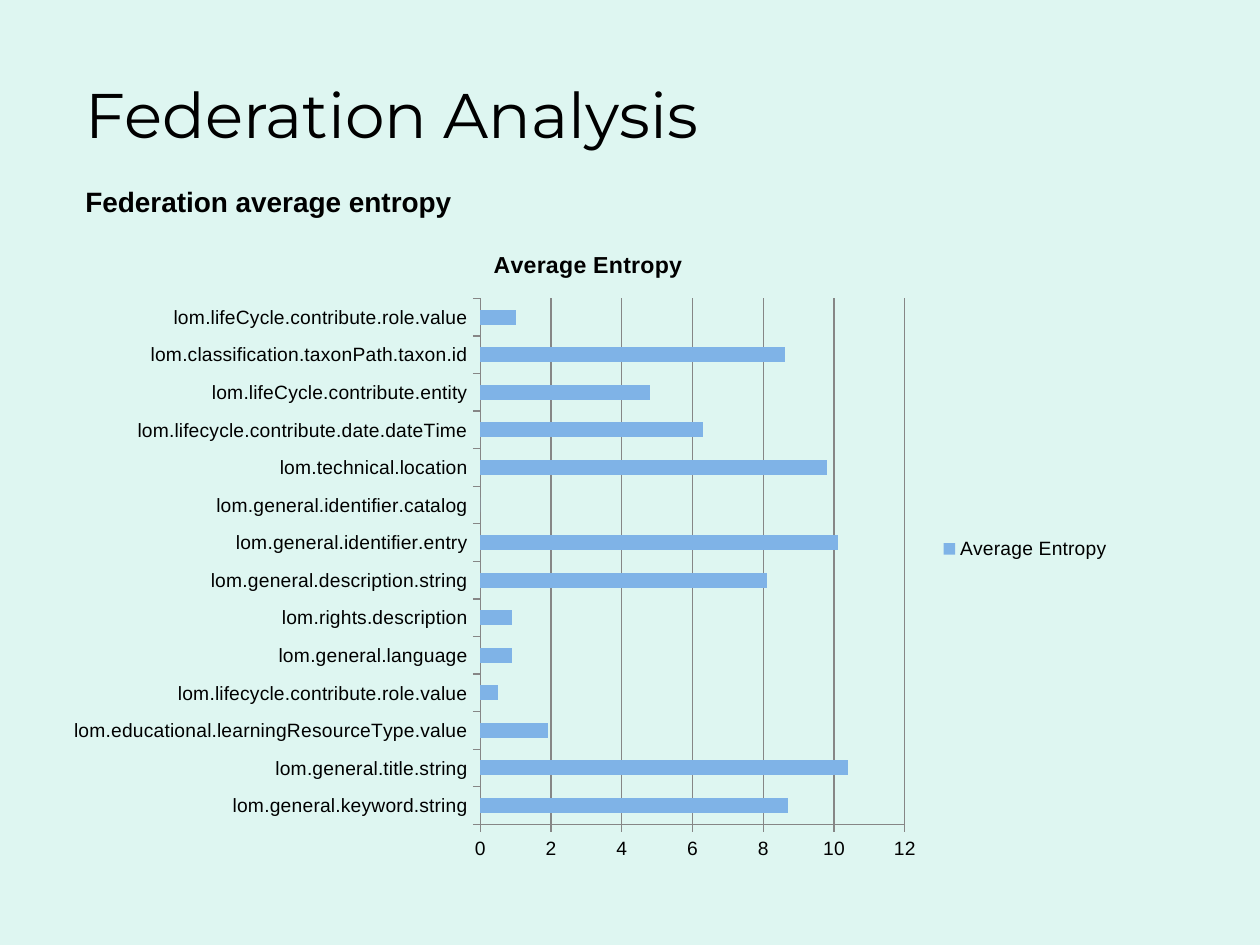
from pptx import Presentation
from pptx import util as u
from pptx.chart.data import CategoryChartData
from pptx.dml.color import RGBColor
from pptx.enum import chart as ch, text

COLORS = {"background": "DEF6F1", "text": "000000", "bar": "7FB3E7", "line": "868686"}
TITLE = "Federation Analysis"
SUBTITLE = "Federation average entropy"
SERIES = "Average Entropy"
ENTROPY = [
    ("lom.general.keyword.string", 8.7),
    ("lom.general.title.string", 10.4),
    ("lom.educational.learningResourceType.value", 1.9),
    ("lom.lifecycle.contribute.role.value", 0.5),
    ("lom.general.language", 0.9),
    ("lom.rights.description", 0.9),
    ("lom.general.description.string", 8.1),
    ("lom.general.identifier.entry", 10.1),
    ("lom.general.identifier.catalog", 0),
    ("lom.technical.location", 9.8),
    ("lom.lifecycle.contribute.date.dateTime", 6.3),
    ("lom.lifeCycle.contribute.entity", 4.8),
    ("lom.classification.taxonPath.taxon.id", 8.6),
    ("lom.lifeCycle.contribute.role.value", 1),
]
# left, top, width, height in centimetres
BOXES = {
    "title": (1.47, 1.47, 21.16, 1.9),
    "subtitle": (1.47, 3.6, 17.58, 0.94),
    "chart": (1.06, 4.55, 21.59, 13.03),
}


def color(name):
    return RGBColor.from_string(COLORS[name])


def box(name):
    return [u.Cm(length) for length in BOXES[name]]


def set_all(target, values):
    for name, value in values.items():
        setattr(target, name, value)


def format_font(font, size, name="Arial", bold=False):
    set_all(font, {"size": u.Pt(size), "name": name, "bold": bold})
    font.color.rgb = color("text")


def write(shape, place, content, size, name, bold, frame_format):
    set_all(shape, dict(zip(("left", "top", "width", "height"), box(place))))
    frame = shape.text_frame
    set_all(frame, {"word_wrap": True, **frame_format})
    paragraph = frame.paragraphs[0]
    paragraph.text = content
    paragraph.alignment = text.PP_ALIGN.LEFT
    format_font(paragraph.runs[0].font, size, name, bold)
    return paragraph


def add_entropy_chart(slide):
    data = CategoryChartData()
    data.categories = [category for category, _ in ENTROPY]
    data.add_series(SERIES, [value for _, value in ENTROPY])
    chart = slide.shapes.add_chart(
        ch.XL_CHART_TYPE.BAR_CLUSTERED, *box("chart"), data).chart
    format_font(chart.font, 11)

    chart.has_title = True
    title = chart.chart_title
    title.include_in_layout = False
    title.text_frame.text = SERIES
    format_font(title.text_frame.paragraphs[0].runs[0].font, 13.2, bold=True)

    chart.has_legend = True
    set_all(chart.legend, {"position": ch.XL_LEGEND_POSITION.RIGHT,
                           "include_in_layout": False})
    format_font(chart.legend.font, 11)

    for axis in (chart.category_axis, chart.value_axis):
        set_all(axis, {"major_tick_mark": ch.XL_TICK_MARK.OUTSIDE,
                       "minor_tick_mark": ch.XL_TICK_MARK.NONE})
        axis.format.line.color.rgb = color("line")
        format_font(axis.tick_labels.font, 11)
    chart.category_axis.has_major_gridlines = False
    set_all(chart.value_axis, {"has_major_gridlines": True, "minimum_scale": 0,
                               "maximum_scale": 12, "major_unit": 2})
    chart.value_axis.major_gridlines.format.line.color.rgb = color("line")

    plot = chart.plots[0]
    set_all(plot, {"gap_width": 150, "vary_by_categories": False})
    fill = plot.series[0].format.fill
    fill.solid()
    fill.fore_color.rgb = color("bar")


def main():
    presentation = Presentation()
    set_all(presentation, {"slide_width": u.Cm(25.4), "slide_height": u.Cm(19.05)})
    slide = presentation.slides.add_slide(presentation.slide_layouts[5])
    slide.background.fill.solid()
    slide.background.fill.fore_color.rgb = color("background")

    title = write(slide.shapes.title, "title", TITLE, 36, "Montserrat", False,
                  {"vertical_anchor": text.MSO_ANCHOR.MIDDLE,
                   "auto_size": text.MSO_AUTO_SIZE.NONE})
    title.line_spacing = 0.8
    write(slide.shapes.add_textbox(*box("subtitle")), "subtitle", SUBTITLE, 16,
          "Arial", True, {"auto_size": text.MSO_AUTO_SIZE.SHAPE_TO_FIT_TEXT})
    add_entropy_chart(slide)
    presentation.save("out.pptx")


if __name__ == "__main__":
    main()
